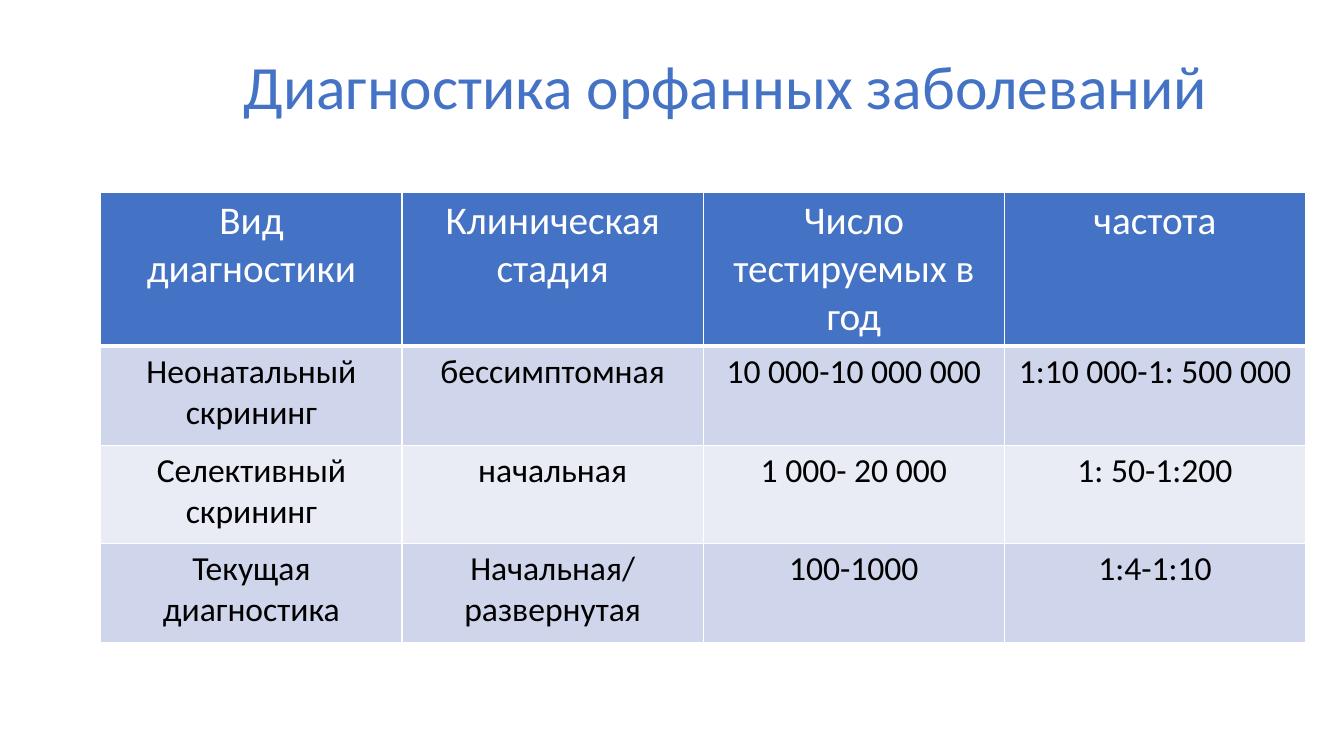
from dataclasses import dataclass

from lxml import etree
from pptx import Presentation
from pptx.dml.color import RGBColor
from pptx.enum.text import MSO_ANCHOR, PP_ALIGN
from pptx.oxml.ns import qn
from pptx.slide import Slide
from pptx.table import _Cell
from pptx.text.text import TextFrame
from pptx.util import Inches, Pt

CENTER = PP_ALIGN.CENTER
MIDDLE = MSO_ANCHOR.MIDDLE

BLUE = RGBColor(0x44, 0x72, 0xC4)
BAND_DARK = RGBColor(0xCF, 0xD5, 0xEA)
BAND_LIGHT = RGBColor(0xE9, 0xEB, 0xF5)
WHITE = RGBColor(0xFF, 0xFF, 0xFF)
BLACK = RGBColor(0x00, 0x00, 0x00)

TITLE = "Диагностика орфанных заболеваний"
ROWS = (
    ("Вид диагностики", "Клиническая стадия", "Число тестируемых в год", "частота"),
    ("Неонатальный скрининг", "бессимптомная", "10 000-10 000 000", "1:10 000-1: 500 000"),
    ("Селективный скрининг", "начальная", "1 000- 20 000", "1: 50-1:200"),
    ("Текущая диагностика", "Начальная/развернутая", "100-1000", "1:4-1:10"),
)
TABLE_WIDTH = 11.95
ROW_HEIGHT = 0.98


@dataclass(frozen=True)
class RowStyle:
    fill: RGBColor
    color: RGBColor
    size: int
    bottom_border: int = 1


HEADER = RowStyle(BLUE, WHITE, 28, bottom_border=3)
BANDS = (RowStyle(BAND_DARK, BLACK, 24), RowStyle(BAND_LIGHT, BLACK, 24))


def write_text(frame: TextFrame, text: str, size: int, color: RGBColor) -> None:
    para = frame.paragraphs[0]
    para.alignment = CENTER
    span = para.add_run()
    span.text = text
    span.font.color.rgb = color
    formats = {"name": "Calibri", "size": Pt(size), "bold": False}
    for name, value in formats.items():
        setattr(span.font, name, value)


def add_borders(cell: _Cell, bottom: int) -> None:
    properties = cell._tc.get_or_add_tcPr()
    widths = {"a:lnL": 1, "a:lnR": 1, "a:lnT": 1, "a:lnB": bottom}
    for tag, width in widths.items():
        line = etree.SubElement(properties, qn(tag), w=str(Pt(width)))
        fill = etree.SubElement(line, qn("a:solidFill"))
        etree.SubElement(fill, qn("a:srgbClr"), val=str(WHITE))


def add_title(page: Slide) -> None:
    title = page.shapes.title
    box = {"left": 1.45, "top": 0.16, "width": 11.5, "height": 1.45}
    for name, value in box.items():
        setattr(title, name, Inches(value))
    title.text_frame.vertical_anchor = MIDDLE
    title.text_frame.paragraphs[0].line_spacing = 0.9
    write_text(title.text_frame, TITLE, 44, BLUE)


def add_diagnostics_table(page: Slide) -> None:
    table = page.shapes.add_table(
        len(ROWS), len(ROWS[0]), Inches(1), Inches(1.91),
        Inches(TABLE_WIDTH), Inches(ROW_HEIGHT * len(ROWS)),
    ).table
    for row_index, texts in enumerate(ROWS):
        style = BANDS[(row_index - 1) % 2] if row_index else HEADER
        for column_index, text in enumerate(texts):
            cell = table.cell(row_index, column_index)
            add_borders(cell, style.bottom_border)
            cell.fill.solid()
            cell.fill.fore_color.rgb = style.fill
            write_text(cell.text_frame, text, style.size, style.color)


def main() -> None:
    deck = Presentation()
    deck.slide_width = Inches(13.33)
    deck.slide_height = Inches(7.5)
    page = deck.slides.add_slide(deck.slide_layouts.get_by_name("Title Only"))
    add_title(page)
    add_diagnostics_table(page)
    deck.save("out.pptx")


if __name__ == "__main__":
    main()
